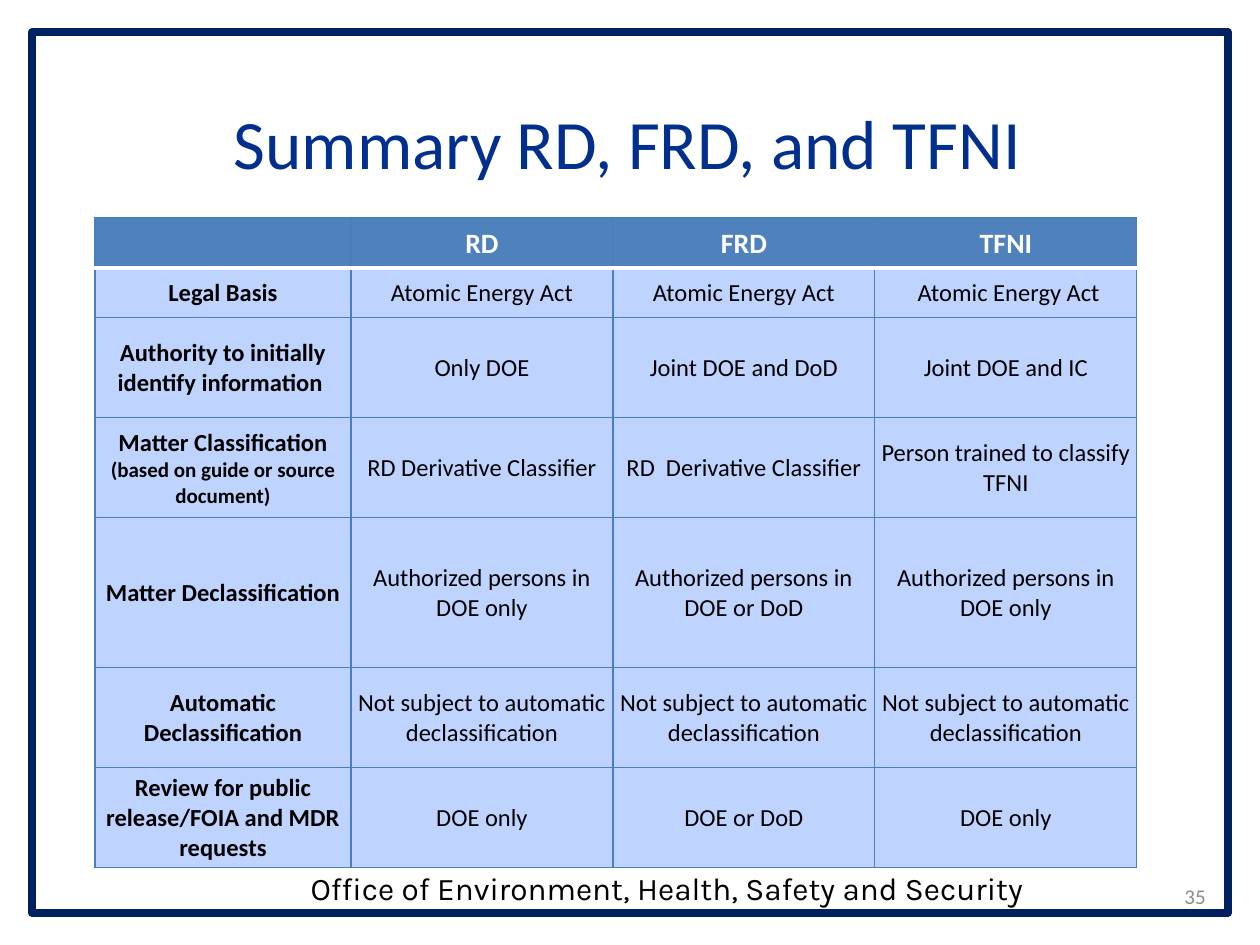
"""Build the summary slide comparing RD, FRD and TFNI."""
from lxml.etree import SubElement
from pptx import Presentation
from pptx.dml.color import RGBColor
from pptx.enum.shapes import MSO_SHAPE
from pptx.enum.text import MSO_ANCHOR as ANCHOR, PP_ALIGN as ALIGN
from pptx.oxml.ns import qn
from pptx.util import Pt

PX = 914400 / 126
HEADER, BODY, EDGE = "4F81BD", "BFD3FF", "4B7EBC"


def rgb(value):
    return RGBColor.from_string(value)


def write(p, text, size=14, color="000000", bold=False, font="Calibri", align=ALIGN.CENTER):
    p.alignment = align
    r = p.add_run()
    r.text = text
    r.font.size, r.font.bold, r.font.name = Pt(size), bold, font
    r.font.color.rgb = rgb(color)


prs = Presentation()
prs.slide_width, prs.slide_height = round(1260 * PX), round(945 * PX)
s = prs.slides.add_slide(prs.slide_layouts[5])

frame = s.shapes.add_shape(MSO_SHAPE.RECTANGLE, *[round(v * PX) for v in (32, 32, 1196, 881)])
frame.shadow.inherit = False
frame.fill.background()
frame.line.color.rgb = rgb("002060")
frame.line.width = Pt(4.5)

title = s.shapes.title
title.left, title.top, title.width, title.height = [round(v * PX) for v in (221, 63, 882, 158)]
title.text_frame.vertical_anchor = ANCHOR.MIDDLE
write(title.text_frame.paragraphs[0], "Summary RD, FRD, and TFNI",
      size=39.6, color="002F8E", align=ALIGN.LEFT)

labels = [
    ((284, 863, 766, 50), ANCHOR.TOP, "Office of Environment, Health, Safety and Security",
     dict(size=18, font="Karla")),
    ((1050, 871, 168, 50), ANCHOR.MIDDLE, "35",
     dict(size=12, color="8C8C8C", align=ALIGN.RIGHT)),
]
for box, anchor, text, style in labels:
    tf = s.shapes.add_textbox(*[round(v * PX) for v in box]).text_frame
    tf.word_wrap = True
    tf.vertical_anchor = anchor
    write(tf.paragraphs[0], text, **style)

rows = [
    ("", "RD", "FRD", "TFNI"),
    ("Legal Basis", "Atomic Energy Act", "Atomic Energy Act", " Atomic Energy Act"),
    ("Authority to initially identify information ", "Only DOE",
     "Joint DOE and DoD", "Joint DOE and IC"),
    ("Matter Classification\n(based on guide or source document)", "RD Derivative Classifier",
     "RD  Derivative Classifier", "Person trained to classify TFNI"),
    ("Matter Declassification", "Authorized persons in DOE only",
     "Authorized persons in DOE or DoD", "Authorized persons in DOE only"),
    ("Automatic Declassification", *["Not subject to automatic declassification"] * 3),
    ("Review for public release/FOIA and MDR requests", "DOE only", "DOE or DoD", "DOE only"),
]
widths = [256, 262, 262, 262]
heights = [50, 50, 100, 100, 150, 100, 100]
table = s.shapes.add_table(len(rows), len(widths), *[
    round(v * PX) for v in (95, 218, sum(widths), sum(heights))]).table
for col, width in zip(table.columns, widths):
    col.width = round(width * PX)
for row, height in zip(table.rows, heights):
    row.height = round(height * PX)

for i, texts in enumerate(rows):
    for j, text in enumerate(texts):
        cell = table.cell(i, j)
        cell.margin_left = cell.margin_right = cell.margin_top = round(PX)
        cell.margin_bottom = 0
        cell.vertical_anchor = ANCHOR.MIDDLE
        tcPr = cell._tc.get_or_add_tcPr()
        for side in "LRTB":
            under_header = (i, side) in ((0, "B"), (1, "T"))
            color, weight = ("FFFFFF", 2) if under_header else (EDGE, 0.75)
            ln = SubElement(tcPr, qn(f"a:ln{side}"), w=str(Pt(weight)))
            SubElement(SubElement(ln, qn("a:solidFill")), qn("a:srgbClr"), val=color)
        cell.fill.solid()
        cell.fill.fore_color.rgb = rgb(BODY if i else HEADER)
        if not text:
            continue
        p = cell.text_frame.paragraphs[0]
        main, _, detail = text.partition("\n")
        if i:
            write(p, main, bold=j == 0)
        else:
            write(p, main, size=16, color="FFFFFF", bold=True)
        if detail:
            p.add_line_break()
            write(p, detail, size=12, bold=True)

prs.save("out.pptx")
